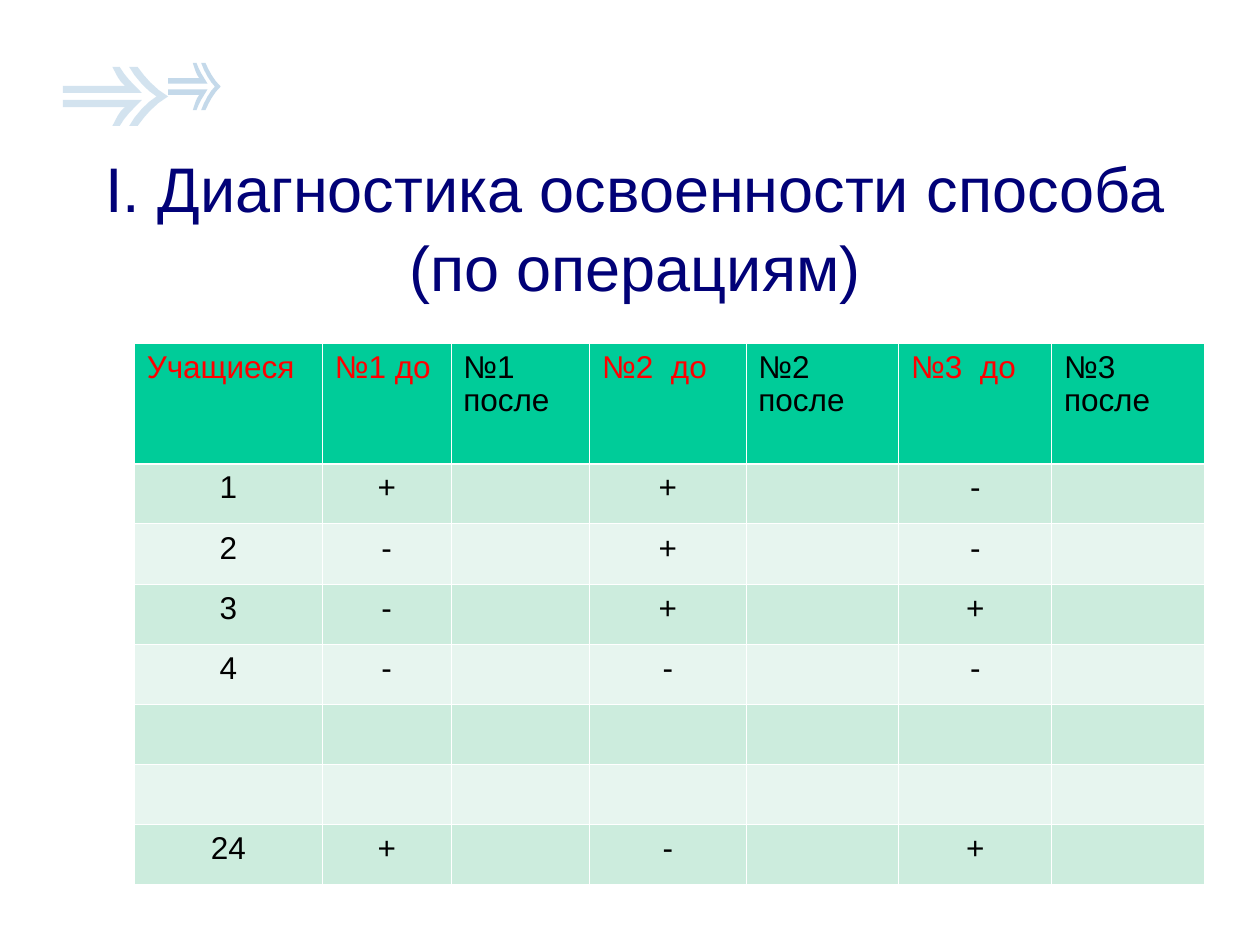
import pptx
import pptx.dml.color
import pptx.enum.text
import pptx.oxml
import pptx.oxml.ns
import pptx.util

Cm = pptx.util.Cm
Pt = pptx.util.Pt
RGBColor = pptx.dml.color.RGBColor
Align = pptx.enum.text.PP_ALIGN

FONT = "Arial"
WHITE = RGBColor(0xFF, 0xFF, 0xFF)
BLACK = RGBColor(0x00, 0x00, 0x00)
RED = RGBColor(0xFF, 0x00, 0x00)
NAVY = RGBColor(0x01, 0x01, 0x77)
GREEN = RGBColor(0x00, 0xCC, 0x99)
MINT = RGBColor(0xCC, 0xEC, 0xDD)
PALE = RGBColor(0xE7, 0xF5, 0xEF)
BLUE = RGBColor(0x8A, 0xB5, 0xD6)
SKY = RGBColor(0xA9, 0xC9, 0xE1)

# Upper halves of the arrow's parts, in percent of its box
BARB = [(0, 44), (0, 32), (59, 32), (55, 25), (52, 17), (47, 0),
        (54, 0), (58, 11), (63, 22), (69, 33), (75, 44)]
OUTER = [(71, 0), (77, 14), (83, 26), (91, 39), (100, 50)]
INNER = [(89, 50), (82, 41), (75, 29), (68, 14), (63, 0)]

HEADS = ["Учащиеся", "№1 до", "№1 после", "№2  до", "№2 после",
         "№3  до", "№3 после"]
MARKS = [("1", "+", "+", "-"), ("2", "-", "+", "-"), ("3", "-", "+", "+"),
         ("4", "-", "-", "-"), ("",) * 4, ("",) * 4, ("24", "+", "-", "+")]
COLS = [3.79, 2.59, 2.8, 3.15, 3.08, 3.08, 3.08]
HEAD_H, ROW_H = 2.42, 1.21


def flip(points):
    """Mirror points top to bottom, keeping the outline in order."""
    return [(x, 100 - y) for x, y in reversed(points)]


def add_arrow(slide, left, top, width, height, color):
    tip = OUTER + flip(OUTER)[1:] + flip(INNER) + INNER[1:]
    first, *rest = [BARB, flip(BARB), tip]
    pen = slide.shapes.build_freeform(
        *first[0], scale=(Cm(width) / 100, Cm(height) / 100))
    pen.add_line_segments(first[1:])
    for part in rest:
        pen.move_to(*part[0])
        pen.add_line_segments(part[1:])
    arrow = pen.convert_to_shape(Cm(left), Cm(top))
    arrow.shadow.inherit = False
    arrow.line.fill.background()
    arrow.fill.solid()
    arrow.fill.fore_color.rgb = color
    tint = arrow.fill._xPr.find(".//" + pptx.oxml.ns.qn("a:srgbClr"))
    tint.append(pptx.oxml.parse_xml(
        f'<a:alpha {pptx.oxml.ns.nsdecls("a")} val="50000"/>'))


def style(para, size, color, align, pitch):
    para.alignment = align
    para.line_spacing = pitch
    para.font.size = Pt(size)
    for run in para.runs:
        run.font.name = FONT
        run.font.size = Pt(size)
        run.font.color.rgb = color


def add_title(slide, left, top, width, height):
    frame = slide.shapes.add_textbox(
        Cm(left), Cm(top), Cm(width), Cm(height)).text_frame
    frame.word_wrap = True
    frame.margin_top = Cm(0.19)
    frame.text = "I. Диагностика освоенности способа (по операциям)"
    style(frame.paragraphs[0], 36, NAVY, Align.CENTER, 1.05)


def add_edges(cell, thick):
    """Draw white borders; the side named by thick is heavier."""
    props = cell._tc.get_or_add_tcPr()
    for side in "LRTB":
        width = Pt(1.47 if side == thick else 0.45)
        props.append(pptx.oxml.parse_xml(
            f'<a:ln{side} {pptx.oxml.ns.nsdecls("a")} w="{width}">'
            f'<a:solidFill><a:srgbClr val="{WHITE}"/></a:solidFill>'
            f'</a:ln{side}>'))


def fill_cell(cell, text, fill, color, align, thick):
    add_edges(cell, thick)
    cell.fill.solid()
    cell.fill.fore_color.rgb = fill
    cell.margin_left = cell.margin_right = Cm(0.25)
    cell.margin_top, cell.margin_bottom = Cm(0.18), Cm(0.13)
    cell.text = text
    style(cell.text_frame.paragraphs[0], 18, color, align, 0.93)


def add_grid(slide, left, top):
    tall = HEAD_H + ROW_H * len(MARKS)
    table = slide.shapes.add_table(
        len(MARKS) + 1, len(COLS), Cm(left), Cm(top),
        Cm(sum(COLS)), Cm(tall)).table
    table.first_row = table.horz_banding = False
    for col, width in zip(table.columns, COLS):
        col.width = Cm(width)
    for i, row in enumerate(table.rows):
        row.height = Cm(ROW_H if i else HEAD_H)
    for i, text in enumerate(HEADS):
        color = BLACK if "после" in text else RED
        fill_cell(table.cell(0, i), text, GREEN, color, Align.LEFT, "B")
    for i, (pupil, *signs) in enumerate(MARKS, 1):
        texts = [pupil]
        for sign in signs:
            texts += [sign, ""]
        for j, text in enumerate(texts):
            fill_cell(table.cell(i, j), text, MINT if i % 2 else PALE,
                      BLACK, Align.CENTER, "T" if i == 1 else "")


def main():
    deck = pptx.Presentation()
    deck.slide_width, deck.slide_height = Cm(25.4), Cm(19.05)
    slide = deck.slides.add_slide(deck.slide_layouts[6])
    add_arrow(slide, 3.39, 1.27, 1.06, 0.95, BLUE)
    add_arrow(slide, 1.27, 1.35, 2.12, 1.19, SKY)
    add_title(slide, 1.7, 2.74, 22.2, 2.54)
    add_grid(slide, 2.71, 6.93)
    deck.save("out.pptx")


if __name__ == "__main__":
    main()
